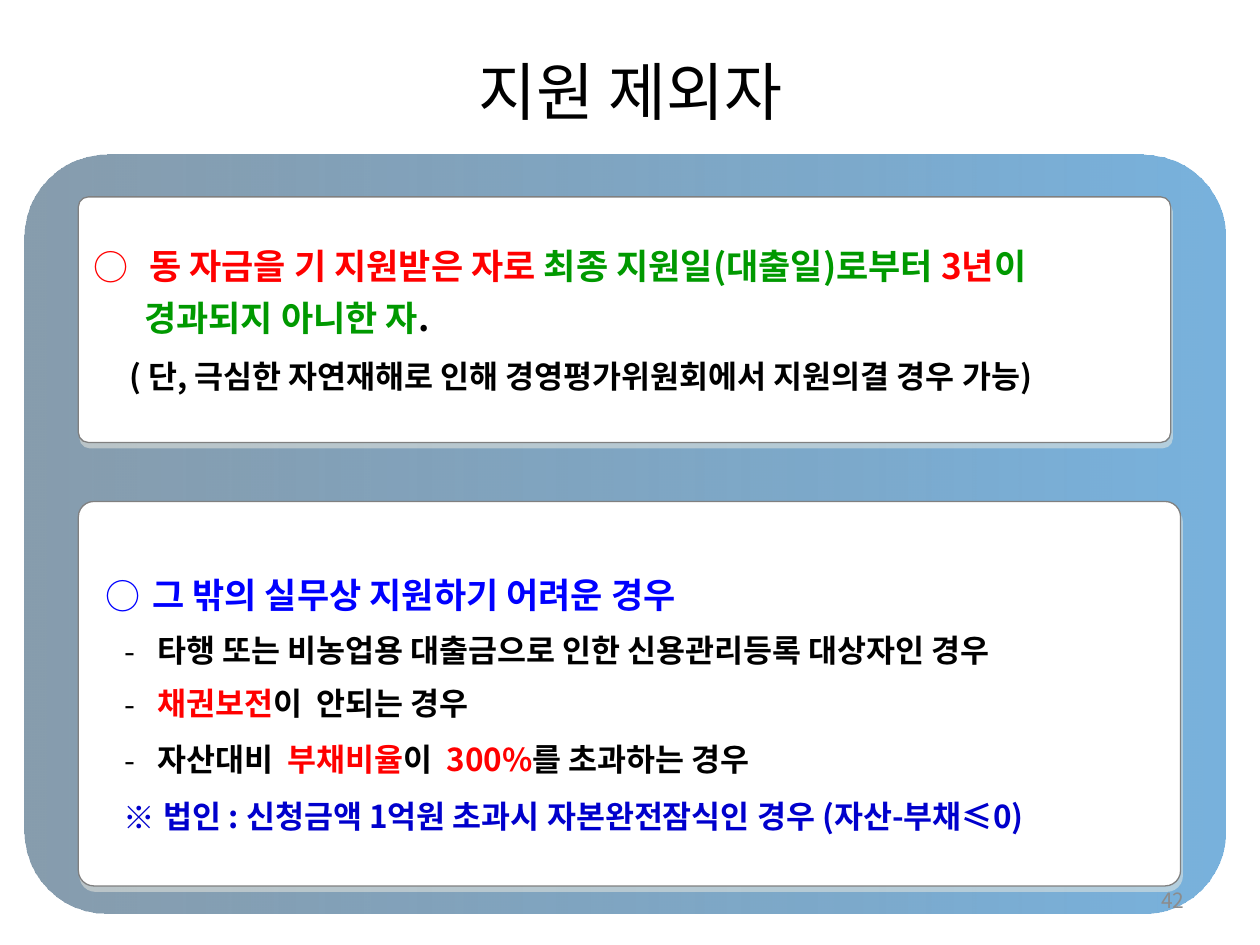
from lxml import etree
from pptx import Presentation
from pptx.dml.color import RGBColor
from pptx.enum import shapes, text
from pptx.oxml import ns
from pptx.util import Cm, Pt

FONT = "Noto Sans CJK KR"
BLACK = RGBColor(0, 0, 0)
WHITE = RGBColor(0xFF, 0xFF, 0xFF)
RED = RGBColor(0xFF, 0, 0)
GREEN = RGBColor(0, 0x99, 0)
BLUE = RGBColor(0, 0, 0xFF)
NAVY = RGBColor(0, 0, 0xCC)
GRAY = RGBColor(0x80, 0x80, 0x80)
NUMBER_GRAY = RGBColor(0x8C, 0x8C, 0x8C)
SHADOW = RGBColor(0xEE, 0xEC, 0xE1)
PANEL_STOPS = [(RGBColor(0x0E, 0x3A, 0x5C), 50), (RGBColor(0x1E, 0x7E, 0xC6), 60)]

EXCLUDED = [
    dict(size=20, left=1.12, hang=1.12, bullet="○", color=RED, runs=[
        ("동 자금을 기 지원받은 자로 ", RED), ("최종 지원일(대출일)로부터 ", GREEN),
        ("3년", RED), ("이", GREEN)]),
    dict(size=20, left=1.02, spacing=1.25, runs=[
        ("경과되지 아니한 자", GREEN), (".", BLACK)]),
    dict(size=18, left=0.72, spacing=1.5, runs=[
        ("( 단, 극심한 자연재해로 인해 경영평가위원회에서 지원의결 경우 가능)", BLACK)]),
]
DASH = dict(size=18, left=1.25, hang=0.65, bullet="-", color=BLACK)
IMPRACTICAL = [
    dict(size=20, left=1.15, hang=0.95, bullet="○", color=BLUE, spacing=1.5, runs=[
        ("그 밖의 실무상 지원하기 어려운 경우", BLUE)]),
    dict(DASH, spacing=1.4, runs=[
        ("타행 또는 비농업용 대출금으로 인한 신용관리등록 대상자인 경우", BLACK)]),
    dict(DASH, spacing=1.4, runs=[
        ("채권보전", RED), ("이  안되는 경우", BLACK)]),
    dict(DASH, spacing=1.5, runs=[
        ("자산대비  ", BLACK), ("부채비율", RED), ("이  ", BLACK),
        ("300%", RED), ("를 초과하는 경우", BLACK)]),
    dict(size=18, left=1.38, hang=0.8, bullet="※", color=NAVY, spacing=1.5, runs=[
        ("법인 : 신청금액 1억원 초과시 자본완전잠식인 경우 (자산-부채≤0)", NAVY)]),
]


def add_node(parent, tag, **attrs):
    return etree.SubElement(parent, ns.qn(tag), {k: str(v) for k, v in attrs.items()})


def add_run(p, words, color, size, bold=False):
    r = p.add_run()
    r.text = words
    r.font.color.rgb = color
    for name, value in dict(name=FONT, size=Pt(size), bold=bold).items():
        setattr(r.font, name, value)
    add_node(r.font._element, "a:ea", typeface=FONT)


def format_paragraph(p, left, hang=0, bullet=None, color=None, spacing=1.0):
    p.alignment = text.PP_ALIGN.LEFT
    p.line_spacing = spacing
    pPr = p._p.get_or_add_pPr()
    pPr.set("marL", str(Cm(left)))
    pPr.set("indent", str(-Cm(hang)))
    if bullet:
        add_node(add_node(pPr, "a:buClr"), "a:srgbClr", val=color)
        add_node(pPr, "a:buFont", typeface=FONT)
        add_node(pPr, "a:buChar", char=bullet)


def add_round_rect(s, box, corner):
    sp = s.shapes.add_shape(shapes.MSO_SHAPE.ROUNDED_RECTANGLE, *map(Cm, box))
    sp.adjustments[0] = corner
    sp.shadow.inherit = False
    return sp


def add_panel(s, box):
    sp = add_round_rect(s, box, 0.109)
    sp.line.fill.background()
    sp.fill.gradient()
    sp.fill.gradient_angle = 0
    for stop, (color, opacity) in zip(sp.fill.gradient_stops, PANEL_STOPS):
        stop.color.rgb = color
    for clr, (color, opacity) in zip(sp._element.spPr.iter(ns.qn("a:srgbClr")), PANEL_STOPS):
        add_node(clr, "a:alpha", val=opacity * 1000)


def add_card(s, box, paragraphs):
    sp = add_round_rect(s, box, 0.04)
    sp.fill.solid()
    sp.fill.fore_color.rgb = WHITE
    sp.line.color.rgb = GRAY
    sp.line.width = Pt(0.75)
    effects = sp._element.spPr.find(ns.qn("a:effectLst"))
    shadow = add_node(effects, "a:outerShdw", blurRad=0, dist=Pt(3.2),
                      dir=72 * 60000, algn="ctr", rotWithShape=0)
    add_node(add_node(shadow, "a:srgbClr", val=SHADOW), "a:alpha", val=50000)
    tf = sp.text_frame
    tf.word_wrap = True
    tf.vertical_anchor = text.MSO_ANCHOR.MIDDLE
    for i, item in enumerate(paragraphs):
        p = tf.paragraphs[0] if i == 0 else tf.add_paragraph()
        layout = {k: v for k, v in item.items() if k not in ("runs", "size")}
        format_paragraph(p, **layout)
        for words, color in item["runs"]:
            add_run(p, words, color, item["size"], bold=True)


def fill_line(sp, box, words, color, size, align):
    for name, value in zip(("left", "top", "width", "height"), box):
        setattr(sp, name, Cm(value))
    tf = sp.text_frame
    tf.word_wrap = True
    tf.vertical_anchor = text.MSO_ANCHOR.MIDDLE
    p = tf.paragraphs[0]
    p.alignment = align
    add_run(p, words, color, size)


def main():
    prs = Presentation()
    prs.slide_width, prs.slide_height = Cm(25.4), Cm(19.05)
    s = prs.slides.add_slide(prs.slide_layouts[5])
    fill_line(s.shapes.title, (0, 0.94, 25.4, 1.78), "지원 제외자",
              BLACK, 36, text.PP_ALIGN.CENTER)
    add_panel(s, (0.5, 3.12, 24.2, 15.3))
    add_card(s, (1.58, 3.97, 22.02, 4.95), EXCLUDED)
    add_card(s, (1.58, 10.11, 22.22, 7.75), IMPRACTICAL)
    number = s.shapes.add_textbox(0, 0, 0, 0)
    fill_line(number, (18.2, 17.65, 5.93, 1.01), "42",
              NUMBER_GRAY, 12, text.PP_ALIGN.RIGHT)
    prs.save("out.pptx")


if __name__ == "__main__":
    main()
